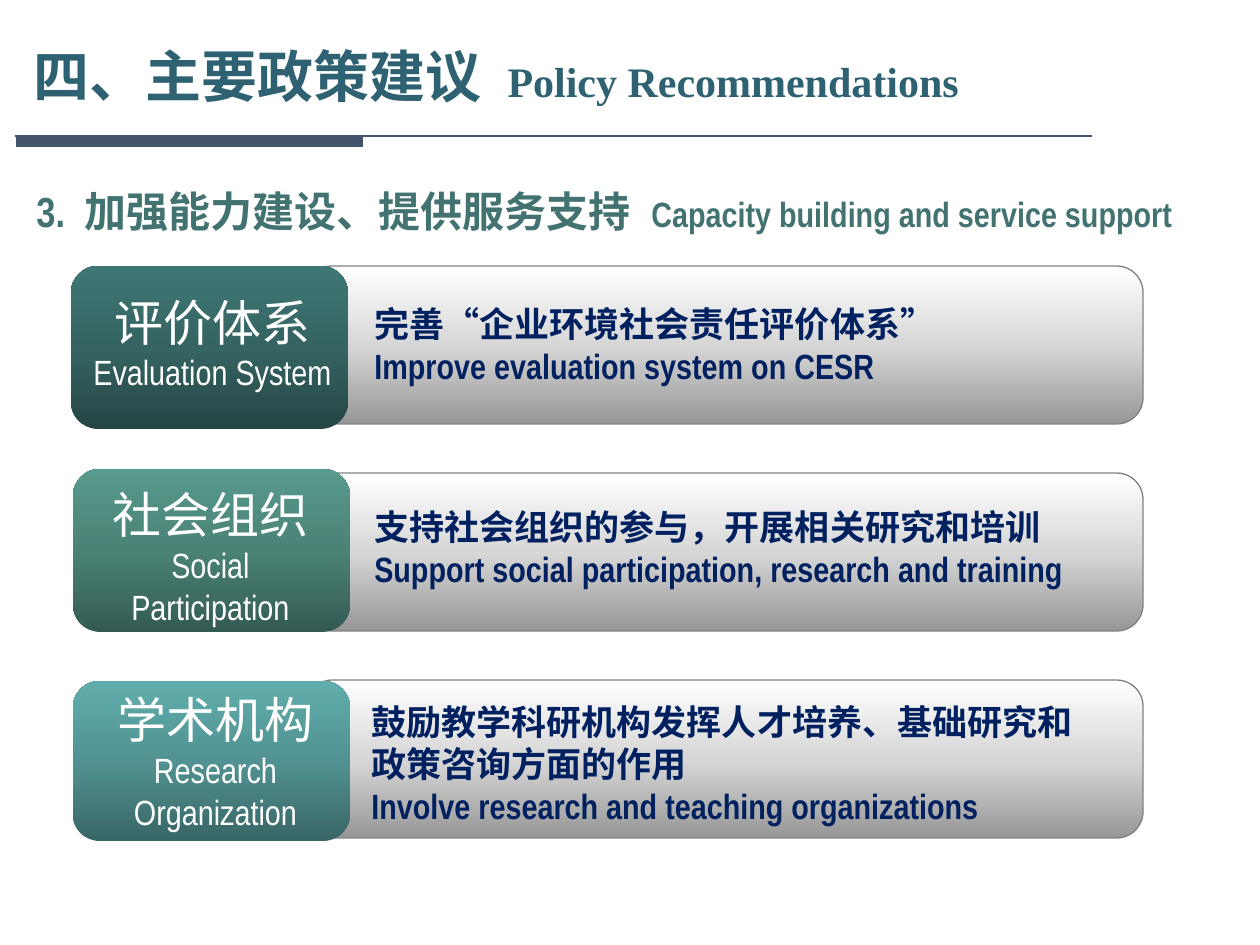
from dataclasses import dataclass

from lxml import etree
from pptx import Presentation, util as u
from pptx.dml.color import RGBColor
from pptx.enum import shapes, text
from pptx.oxml.ns import qn

PX = 914400 / 126
ROW_PITCH = 207


@dataclass(frozen=True)
class Theme:
    """Colours, fonts and type sizes of the slide."""
    rule: str = "44546A"
    title: str = "2E6272"
    heading: str = "427371"
    body: str = "002060"
    label: str = "FFFFFF"
    edge: str = "808080"
    bar: tuple = ("979797", "D7D7D7", "FFFFFF")
    serif: str = "Times New Roman"
    sans: str = "Arial Narrow"
    size_title: int = 32
    size_label: int = 28
    size_heading: int = 24
    size_text: int = 20


THEME = Theme()


@dataclass(frozen=True)
class Row:
    """Texts, tag gradient and part boxes relative to the row."""
    label: tuple
    body: tuple
    colours: tuple
    tag_box: tuple
    label_box: tuple
    body_box: tuple


ROWS = [
    Row(("评价体系", "Evaluation System"),
        ("完善“企业环境社会责任评价体系”", "Improve evaluation system on CESR"),
        ("254645", "356462", "3E7774"),
        (0, 0, 277, 163), (-14, 20, 311, 115), (291, 30, 770, 97)),
    Row(("社会组织", "Social Participation"),
        ("支持社会组织的参与，开展相关研究和培训",
         "Support social participation, research and training"),
        ("345B53", "4A8276", "589A8D"),
        (2, -4, 277, 163), (21, 5, 237, 158), (291, 26, 804, 97)),
    Row(("学术机构", "Research", "Organization"),
        ("鼓励教学科研机构发挥人才培养、基础研究和政策咨询方面的作用",
         "Involve research and teaching organizations"),
        ("396666", "529292", "61ADAD"),
        (2, 1, 277, 160), (-9, 3, 307, 158), (288, 14, 738, 140)),
]


def emu(*lengths):
    """Turn px lengths into EMU."""
    return [u.Emu(round(length * PX)) for length in lengths]


def within(box, part):
    """Place a part relative to the corner of a box."""
    return box[0] + part[0], box[1] + part[1], part[2], part[3]


def add_run(paragraph, wording, size, colour, name, bold=False):
    """Append one formatted run."""
    run = paragraph.add_run()
    run.text = wording
    formats = {"size": u.Pt(size), "name": name, "bold": bold}
    for key, value in formats.items():
        setattr(run.font, key, value)
    run.font.color.rgb = RGBColor.from_string(colour)


def set_tabs(paragraph, *stops):
    """Set left tab stops, measured in px from the text edge."""
    tabs = etree.SubElement(paragraph._p.get_or_add_pPr(), qn("a:tabLst"))
    for stop in emu(*stops):
        etree.SubElement(tabs, qn("a:tab"), pos=str(stop), algn="l")


def add_text(slide, box, lines, sizes, colour, bold, alignment):
    """Add a wrapped text box with one paragraph for each line."""
    frame = slide.shapes.add_textbox(*emu(*box)).text_frame
    frame.word_wrap = True
    for index, (line, size) in enumerate(zip(lines, sizes)):
        paragraph = frame.add_paragraph() if index else frame.paragraphs[0]
        paragraph.alignment = alignment
        add_run(paragraph, line, size, colour, THEME.sans, bold)


def add_panel(slide, box, colours, edge=None):
    """Add a rounded panel with a vertical gradient, bottom colour first."""
    shape = slide.shapes.add_shape(shapes.MSO_SHAPE.ROUNDED_RECTANGLE, *emu(*box))
    shape.shadow.inherit = False
    shape.fill.gradient()
    shape.fill.gradient_angle = 90
    stops = shape._element.spPr.find(qn("a:gradFill")).find(qn("a:gsLst"))
    for stop in list(stops):
        stops.remove(stop)
    for position, colour in zip((0, 50000, 100000), colours):
        stop = etree.SubElement(stops, qn("a:gs"), pos=str(position))
        etree.SubElement(stop, qn("a:srgbClr"), val=colour)
    if edge:
        shape.line.color.rgb = RGBColor.from_string(edge)
        shape.line.width = u.Pt(0.75)
    else:
        shape.line.fill.background()


def add_title(slide, box):
    """Place and fill the title placeholder."""
    title = slide.shapes.title
    for key, value in zip(("left", "top", "width", "height"), emu(*box)):
        setattr(title, key, value)
    frame = title.text_frame
    formats = {"word_wrap": True, "auto_size": text.MSO_AUTO_SIZE.NONE,
               "vertical_anchor": text.MSO_ANCHOR.MIDDLE}
    for key, value in formats.items():
        setattr(frame, key, value)
    paragraph = frame.paragraphs[0]
    paragraph.alignment = text.PP_ALIGN.LEFT
    paragraph.line_spacing = 0.9
    set_tabs(paragraph, 474)
    add_run(paragraph, "四、主要政策建议\t", THEME.size_title, THEME.title, THEME.serif, True)
    add_run(paragraph, "Policy Recommendations", THEME.size_heading, THEME.title,
            THEME.serif, True)


def add_rule(slide, box):
    """Draw the thin line and the thick bar under the title."""
    left, top, width, height = box
    colour = RGBColor.from_string(THEME.rule)
    start_x, y, end_x = emu(left, top, left + width)
    line = slide.shapes.add_connector(shapes.MSO_CONNECTOR.STRAIGHT, start_x, y, end_x, y)
    line.line.color.rgb = colour
    line.line.width = u.Pt(1.5)
    etree.SubElement(line._element.spPr, qn("a:effectLst"))
    bar = slide.shapes.add_shape(shapes.MSO_SHAPE.RECTANGLE,
                                 *emu(left + 1, top + 1, 347, height))
    bar.shadow.inherit = False
    bar.fill.solid()
    bar.fill.fore_color.rgb = colour
    bar.line.fill.background()


def add_heading(slide, box):
    """Write the numbered heading with a hanging indent."""
    frame = slide.shapes.add_textbox(*emu(*box)).text_frame
    frame.word_wrap = True
    paragraph = frame.paragraphs[0]
    paragraph.alignment = text.PP_ALIGN.JUSTIFY
    paragraph.line_spacing = 1.4
    indent = emu(48)[0]
    properties = paragraph._p.get_or_add_pPr()
    properties.set("marL", str(indent))
    properties.set("indent", str(-indent))
    set_tabs(paragraph, 48, 614)
    add_run(paragraph, "3.\t加强能力建设、提供服务支持\t", THEME.size_heading,
            THEME.heading, THEME.sans, True)
    add_run(paragraph, "Capacity building and service support", THEME.size_text,
            THEME.heading, THEME.sans, True)


def add_row(slide, box, row):
    """Draw one recommendation: grey bar, coloured tag and both texts."""
    add_panel(slide, within(box, (235, 0, 837, 158)), THEME.bar, THEME.edge)
    add_panel(slide, within(box, row.tag_box), row.colours)
    add_text(slide, within(box, row.label_box), row.label,
             (THEME.size_label, THEME.size_text, THEME.size_text),
             THEME.label, False, text.PP_ALIGN.CENTER)
    add_text(slide, within(box, row.body_box), row.body,
             (THEME.size_text, THEME.size_text),
             THEME.body, True, text.PP_ALIGN.LEFT)


def main():
    """Build the slide and save it."""
    presentation = Presentation()
    presentation.slide_width, presentation.slide_height = emu(1260, 945)
    slide = presentation.slides.add_slide(presentation.slide_layouts[5])
    add_rule(slide, (15, 136, 1077, 10))
    add_title(slide, (21, 11, 1086, 136))
    add_heading(slide, (24, 159, 1197, 87))
    for index, row in enumerate(ROWS):
        add_row(slide, (71, 266 + index * ROW_PITCH, 1072, 163), row)
    presentation.save("out.pptx")


if __name__ == "__main__":
    main()
